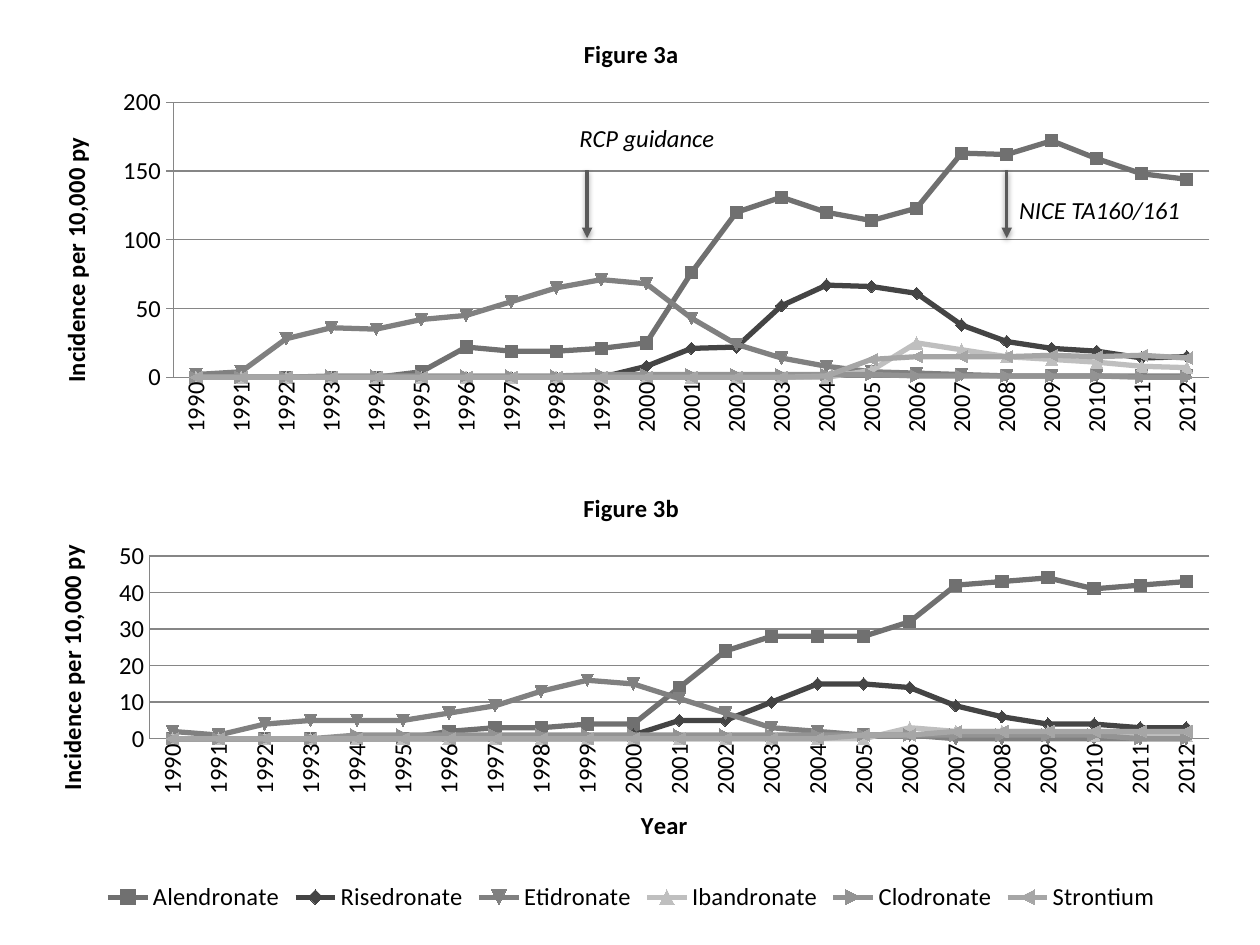
import dataclasses

import lxml.etree
import pptx
import pptx.chart.data
import pptx.dml.color
import pptx.enum.chart
import pptx.enum.shapes
import pptx.enum.text
import pptx.oxml
import pptx.oxml.ns
import pptx.util

COLS, ROWS = 100, 75
BLACK, AXIS_GREY, ARROW_GREY = "000000", "868686", "595959"
FONT, SIZE = "Calibri", pptx.util.Pt(14)
FIRST_YEAR, LAST_YEAR = 1990, 2012
YEARS = [str(year) for year in range(FIRST_YEAR, LAST_YEAR + 1)]
DRUGS = {
    "Alendronate": "707070",
    "Risedronate": "444444",
    "Etidronate": "808080",
    "Ibandronate": "BFBFBF",
    "Clodronate": "939393",
    "Strontium": "A6A6A6",
}
TICK = pptx.enum.chart.XL_TICK_MARK
qn = pptx.oxml.ns.qn

prs = pptx.Presentation()
prs.slide_width = pptx.util.Inches(10)
prs.slide_height = pptx.util.Inches(7.5)


def x(cols: float) -> int:
    return round(prs.slide_width * cols / COLS)


def y(rows: float) -> int:
    return round(prs.slide_height * rows / ROWS)


@dataclasses.dataclass
class Box:
    col: float
    row: float
    cols: float
    rows: float

    def emu(self) -> tuple:
        return x(self.col), y(self.row), x(self.cols), y(self.rows)


@dataclasses.dataclass
class Figure:
    title: str
    box: Box
    plot: dict
    names: list
    values: list
    top: int
    step: int
    tick: int
    x_title: str = ""
    legend: bool = False


@dataclasses.dataclass
class Guidance:
    text: str
    box: Box
    arrow_col: float


def zero_until(start: int, *values: int) -> list:
    known = [0] * (start - FIRST_YEAR) + list(values)
    return known + known[-1:] * (len(YEARS) - len(known))


FIGURES = [
    Figure("Figure 3a", Box(2.3, 1.4, 95.6, 33.6),
           {"x": 0.12, "y": 0.2, "w": 0.86, "h": 0.65},
           [f"Series {n + 1}" for n in range(len(DRUGS))],
           [zero_until(1995, 4, 22, 19, 19, 21, 25, 76, 120, 131, 120, 114, 123, 163, 162, 172, 159, 148, 144),
            zero_until(2000, 8, 21, 22, 52, 67, 66, 61, 38, 26, 21, 19, 14, 15),
            zero_until(1990, 2, 4, 28, 36, 35, 42, 45, 55, 65, 71, 68, 43, 24, 14, 8, 4, 3, 2, 1),
            zero_until(2005, 5, 25, 20, 15, 13, 11, 8, 7),
            zero_until(1993, *[1] * 6, *[2] * 7, *[1] * 5, 0),
            zero_until(2004, 1, 13, *[15] * 3, 16, 15, 16, 14)],
           200, 50, TICK.OUTSIDE),
    Figure("Figure 3b", Box(2.3, 37.4, 95.6, 35.4),
           {"x": 0.1, "y": 0.19, "w": 0.88, "h": 0.41},
           list(DRUGS),
           [zero_until(1996, 2, 3, 3, 4, 4, 14, 24, *[28] * 3, 32, 42, 43, 44, 41, 42, 43),
            zero_until(2000, 1, 5, 5, 10, 15, 15, 14, 9, 6, 4, 4, 3),
            zero_until(1990, 2, 1, 4, *[5] * 3, 7, 9, 13, 16, 15, 11, 7, 3, 2, 1, 1, 0),
            zero_until(2006, 3, *[2] * 3, 1),
            zero_until(1994, *[1] * 17, 0),
            zero_until(2005, 1, 1, 2)],
           50, 10, TICK.NONE, "Year", True),
]
ARROW_TOP, ARROW_END = 13.5, 18.9
GUIDANCE = [
    Guidance("RCP guidance", Box(45, 9.3, 13.2, 3.4), 46.6),
    Guidance("NICE TA160/161", Box(79.9, 15, 17.1, 3.4), 79.9),
]


def rgb(color: str) -> pptx.dml.color.RGBColor:
    return pptx.dml.color.RGBColor.from_string(color)


def set_line(line, color: str, width: float) -> None:
    line.color.rgb = rgb(color)
    line.width = pptx.util.Pt(width)


def set_font(font, **style: bool) -> None:
    font.name, font.size = FONT, SIZE
    font.color.rgb = rgb(BLACK)
    for name, value in style.items():
        setattr(font, name, value)


def add_run(tf, text: str, **style: bool) -> None:
    r = tf.paragraphs[0].add_run()
    r.text = text
    set_font(r.font, **style)


def turn_upright(body) -> None:
    body.set("rot", "-5400000")
    body.set("vert", "horz")


def place_plot(chart, shares: dict) -> None:
    area = chart._chartSpace.find(".//" + qn("c:plotArea"))
    for old in area.findall(qn("c:layout")):
        area.remove(old)
    layout = lxml.etree.Element(qn("c:layout"))
    manual = lxml.etree.SubElement(layout, qn("c:manualLayout"))
    settings = {"layoutTarget": "inner", "xMode": "edge", "yMode": "edge", **shares}
    for name, value in settings.items():
        lxml.etree.SubElement(manual, qn("c:" + name)).set("val", str(value))
    area.insert(0, layout)


def style_axes(chart, fig: Figure) -> None:
    cat, val = chart.category_axis, chart.value_axis
    for axis, tick in ((cat, TICK.NONE), (val, fig.tick)):
        axis.major_tick_mark, axis.minor_tick_mark = tick, TICK.NONE
        set_line(axis.format.line, AXIS_GREY, 0.75)
        set_font(axis.tick_labels.font)
    turn_upright(cat._element.find(qn("c:txPr")).find(qn("a:bodyPr")))
    cat.has_major_gridlines = False
    val.has_major_gridlines = True
    set_line(val.major_gridlines.format.line, AXIS_GREY, 0.75)
    val.minimum_scale, val.maximum_scale, val.major_unit = 0, fig.top, fig.step
    val.tick_labels.number_format = "0"
    val.tick_labels.number_format_is_linked = False
    tf = val.axis_title.text_frame
    add_run(tf, "Incidence per 10,000 py", bold=True)
    turn_upright(tf._txBody.find(qn("a:bodyPr")))
    if fig.x_title:
        add_run(cat.axis_title.text_frame, fig.x_title, bold=True)


def add_figure(s, fig: Figure) -> None:
    data = pptx.chart.data.CategoryChartData(number_format="0")
    data.categories = YEARS
    for name, values in zip(fig.names, fig.values):
        data.add_series(name, values)
    kind = pptx.enum.chart.XL_CHART_TYPE.LINE_MARKERS
    chart = s.shapes.add_chart(kind, *fig.box.emu(), data).chart
    set_font(chart.font)
    chart.has_title = True
    add_run(chart.chart_title.text_frame, fig.title, bold=True)
    chart.plots[0].vary_by_categories = False
    for series, color in zip(chart.plots[0].series, DRUGS.values()):
        series.smooth = False
        set_line(series.format.line, color, 3)
        series.marker.size = 7
        series.marker.format.fill.solid()
        series.marker.format.fill.fore_color.rgb = rgb(color)
        set_line(series.marker.format.line, color, 0.75)
    style_axes(chart, fig)
    place_plot(chart, fig.plot)
    chart.has_legend = fig.legend
    if fig.legend:
        chart.legend.position = pptx.enum.chart.XL_LEGEND_POSITION.BOTTOM
        chart.legend.include_in_layout = False
        set_font(chart.legend.font)


def add_label(s, note: Guidance) -> None:
    tf = s.shapes.add_textbox(*note.box.emu()).text_frame
    tf.word_wrap = True
    tf.auto_size = pptx.enum.text.MSO_AUTO_SIZE.SHAPE_TO_FIT_TEXT
    add_run(tf, note.text, italic=True)


def add_arrow(s, note: Guidance) -> None:
    kind = pptx.enum.shapes.MSO_CONNECTOR.STRAIGHT
    col = x(note.arrow_col)
    sp = s.shapes.add_connector(kind, col, y(ARROW_TOP), col, y(ARROW_END))
    set_line(sp.line, ARROW_GREY, 2)
    lxml.etree.SubElement(sp.line._get_or_add_ln(), qn("a:tailEnd")).set("type", "triangle")
    sp._element.spPr.append(pptx.oxml.parse_xml(
        f'<a:effectLst {pptx.oxml.ns.nsdecls("a")}>'
        '<a:outerShdw blurRad="40000" dist="20000" dir="5400000" rotWithShape="0">'
        f'<a:srgbClr val="{BLACK}"><a:alpha val="38000"/></a:srgbClr>'
        '</a:outerShdw></a:effectLst>'))


def main() -> None:
    s = prs.slides.add_slide(prs.slide_layouts[6])
    for fig in FIGURES:
        add_figure(s, fig)
    for draw in (add_label, add_arrow):
        for note in GUIDANCE:
            draw(s, note)
    prs.save("out.pptx")


if __name__ == "__main__":
    main()
